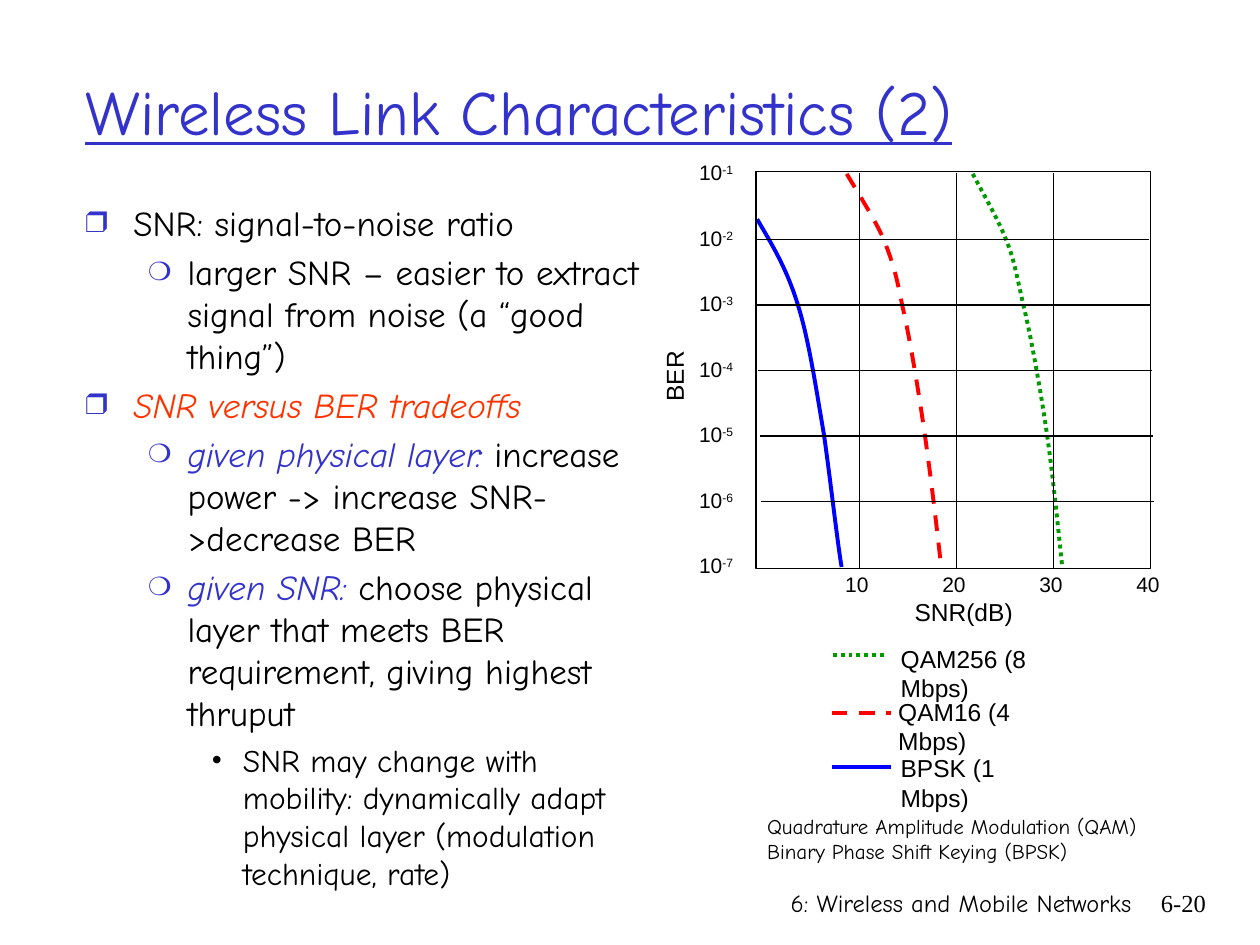
"""Build a slide on wireless link characteristics with a BER versus SNR plot."""
from lxml.etree import SubElement
from pptx import Presentation
from pptx.dml.color import RGBColor
from pptx.enum.dml import MSO_LINE
from pptx.enum.shapes import MSO_CONNECTOR, MSO_SHAPE
from pptx.enum.text import MSO_ANCHOR, PP_ALIGN
from pptx.oxml.ns import qn
from pptx.util import Inches, Pt

BLACK = RGBColor(0x00, 0x00, 0x00)
INDIGO = RGBColor(0x33, 0x33, 0xCC)
ORANGE = RGBColor(0xFF, 0x33, 0x00)
BLUE = RGBColor(0x00, 0x00, 0xFF)
RED = RGBColor(0xFF, 0x00, 0x00)
GREEN = RGBColor(0x00, 0x99, 0x00)
COMIC, ARIAL, TIMES = "Comic Neue", "Arial", "Times New Roman"

BULLETS = [
    (0, [("SNR: signal-to-noise ratio", {})]),
    (1, [("larger SNR – easier to extract signal from noise (a “good thing”)", {})]),
    (0, [("SNR versus BER tradeoffs", {"color": ORANGE, "italic": True})]),
    (1, [("given physical layer:", {"color": INDIGO, "italic": True}),
         (" increase power -> increase SNR->decrease BER", {})]),
    (1, [("given SNR:", {"color": INDIGO, "italic": True}),
         (" choose physical layer that meets BER requirement, giving highest thruput", {})]),
    (2, [("SNR may change with mobility: dynamically adapt physical layer "
          "(modulation technique, rate)", {})]),
]
LEVELS = [
    {"margin": 0.38, "hang": 0.38, "mark": "❒", "percent": 85, "color": INDIGO, "size": 20},
    {"margin": 0.81, "hang": 0.31, "mark": "❍", "percent": 75, "color": INDIGO, "size": 20},
    {"margin": 1.25, "hang": 0.25, "mark": "•", "percent": 100, "color": BLACK, "size": 18},
]
CURVES = [
    {"color": BLUE, "dash": None, "points": [
        (6.01, 1.74), (6.12, 1.93), (6.24, 2.12), (6.33, 2.41), (6.42, 2.69),
        (6.48, 3.1), (6.54, 3.45), (6.59, 3.8), (6.65, 4.33), (6.68, 4.5)]},
    {"color": RED, "dash": MSO_LINE.DASH, "points": [
        (6.72, 1.38), (6.82, 1.55), (6.93, 1.72), (7.01, 1.89), (7.08, 2.07),
        (7.11, 2.16), (7.16, 2.42), (7.22, 2.68), (7.29, 3.1), (7.34, 3.45),
        (7.39, 3.8), (7.43, 4.15), (7.47, 4.5)]},
    {"color": GREEN, "dash": MSO_LINE.ROUND_DOT, "points": [
        (7.72, 1.38), (7.81, 1.55), (7.91, 1.72), (7.98, 1.89), (8.05, 2.06),
        (8.06, 2.15), (8.12, 2.41), (8.18, 2.66), (8.26, 3.1), (8.31, 3.45),
        (8.36, 3.8), (8.41, 4.31), (8.43, 4.49)]},
]
LEGEND = [
    ("BPSK (1 Mbps)", 6.6, 7.07, 6.09, (7.05, 5.93, 1.44, 0.33)),
    ("QAM16 (4 Mbps)", 6.6, 7.07, 5.66, (7.03, 5.48, 1.58, 0.33)),
    ("QAM256 (8 Mbps)", 6.61, 7.04, 5.2, (7.05, 5.06, 1.68, 0.33)),
]
EXPONENTS = ["-1", "-2", "-3", "-4", "-5", "-6", "-7"]
SNR_TICKS = ["10", "20", "30", "40"]
ROW_GAP, COLUMN_GAP = 0.52, 0.77


def add_span(para, text, size=12, font=ARIAL, color=BLACK, italic=False,
             underline=False, raised=False):
    span = para.add_run()
    span.text = text
    span.font.size = Pt(size)
    span.font.name = font
    span.font.color.rgb = color
    span.font.italic = italic
    span.font.underline = underline
    if raised:
        span.font._element.set("baseline", "30000")


def add_box(page, place, wrap=False, anchor=MSO_ANCHOR.TOP):
    box = page.shapes.add_textbox(*map(Inches, place))
    box.text_frame.word_wrap = wrap
    box.text_frame.vertical_anchor = anchor
    return box


def add_text(page, text, place, wrap=False, anchor=MSO_ANCHOR.TOP,
             align=PP_ALIGN.LEFT, **style):
    box = add_box(page, place, wrap, anchor)
    for index, line in enumerate(text.split("\n")):
        frame = box.text_frame
        para = frame.add_paragraph() if index else frame.paragraphs[0]
        para.alignment = align
        add_span(para, line, **style)
    return box


def style_line(line, color, width, dash=None):
    line.color.rgb = color
    line.width = Pt(width)
    if dash is not None:
        line.dash_style = dash


def add_line(page, start, end, color=BLACK, width=0.75, dash=None):
    line = page.shapes.add_connector(MSO_CONNECTOR.STRAIGHT, *map(Inches, start + end))
    style_line(line.line, color, width, dash)
    SubElement(line._element.spPr, qn("a:effectLst"))


def round_segments(outline):
    segments = outline.findall(qn("a:lnTo"))
    for first in range(0, len(segments), 3):
        bezier = SubElement(outline, qn("a:cubicBezTo"))
        for segment in segments[first:first + 3]:
            bezier.append(segment[0])
            outline.remove(segment)


def add_curve(page, points, color, dash):
    corners = [tuple(map(Inches, point)) for point in points]
    builder = page.shapes.build_freeform(*corners[0])
    builder.add_line_segments(corners[1:], close=False)
    curve = builder.convert_to_shape()
    round_segments(next(curve._element.iter(qn("a:path"))))
    curve.shadow.inherit = False
    curve.fill.background()
    style_line(curve.line, color, 2.25, dash)


def set_bullet(para, level):
    para.space_before = Pt(4)
    props = para._p.get_or_add_pPr()
    props.set("marL", str(Inches(level["margin"])))
    props.set("indent", str(-Inches(level["hang"])))
    SubElement(SubElement(props, qn("a:buClr")), qn("a:srgbClr"), val=str(level["color"]))
    SubElement(props, qn("a:buSzPct"), val=str(level["percent"] * 1000))
    SubElement(props, qn("a:buFont"), typeface=TIMES)
    SubElement(props, qn("a:buChar"), char=level["mark"])


def add_bullets(page):
    frame = add_box(page, (0.58, 1.55, 4.68, 5.68), wrap=True).text_frame
    for index, (depth, spans) in enumerate(BULLETS):
        para = frame.add_paragraph() if index else frame.paragraphs[0]
        para.level = depth
        set_bullet(para, LEVELS[depth])
        for text, style in spans:
            add_span(para, text, size=LEVELS[depth]["size"], font=COMIC, **style)


def add_plot(page):
    for curve in CURVES:
        add_curve(page, **curve)
    border = page.shapes.add_shape(MSO_SHAPE.RECTANGLE, *map(Inches, (6, 1.36, 3.13, 3.15)))
    border.shadow.inherit = False
    border.fill.background()
    style_line(border.line, BLACK, 0.75)
    for row in range(5):
        left, top = 6 + 0.01 * row, 1.9 + ROW_GAP * row
        add_line(page, (left, top), (left + 3.12, top))
    for column in range(3):
        left = 6.82 + COLUMN_GAP * column
        add_line(page, (left, 1.37), (left, 4.52))
    for column, tick in enumerate(SNR_TICKS):
        add_text(page, tick, (6.61 + COLUMN_GAP * column, 4.49, 0.39, 0.3))
    for row, exponent in enumerate(EXPONENTS):
        label = add_text(page, "10", (5.45, 1.22 + ROW_GAP * row, 0.48, 0.3))
        add_span(label.text_frame.paragraphs[0], exponent, raised=True)
    add_text(page, "SNR(dB)", (7.16, 4.69, 0.98, 0.33), size=14)
    add_text(page, "BER", (5.05, 2.82, 0.6, 0.33), size=14).rotation = 270
    for curve, (name, left, right, top, place) in zip(CURVES, LEGEND):
        add_line(page, (left, top), (right, top), curve["color"], 2.25, curve["dash"])
        add_text(page, name, place, wrap=True, size=14)


def main():
    deck = Presentation()
    deck.slide_width, deck.slide_height = Inches(10), Inches(7.5)
    page = deck.slides.add_slide(deck.slide_layouts[6])
    add_text(page, "6: Wireless and Mobile Networks", (4.86, 7, 4.22, 0.5), wrap=True,
             align=PP_ALIGN.RIGHT, size=14, font=COMIC)
    add_text(page, "6-20", (8.93, 7, 0.74, 0.5), wrap=True,
             align=PP_ALIGN.RIGHT, size=14, font=TIMES)
    add_text(page, "Wireless Link Characteristics (2)", (0.58, 0.25, 8.5, 1.25), wrap=True,
             anchor=MSO_ANCHOR.MIDDLE, size=36, font=COMIC, color=INDIGO, underline=True)
    add_bullets(page)
    add_plot(page)
    add_text(page, "Quadrature Amplitude Modulation (QAM)\nBinary Phase Shift Keying (BPSK)",
             (5.99, 6.41, 3.44, 0.5), font=COMIC)
    deck.save("out.pptx")


if __name__ == "__main__":
    main()
